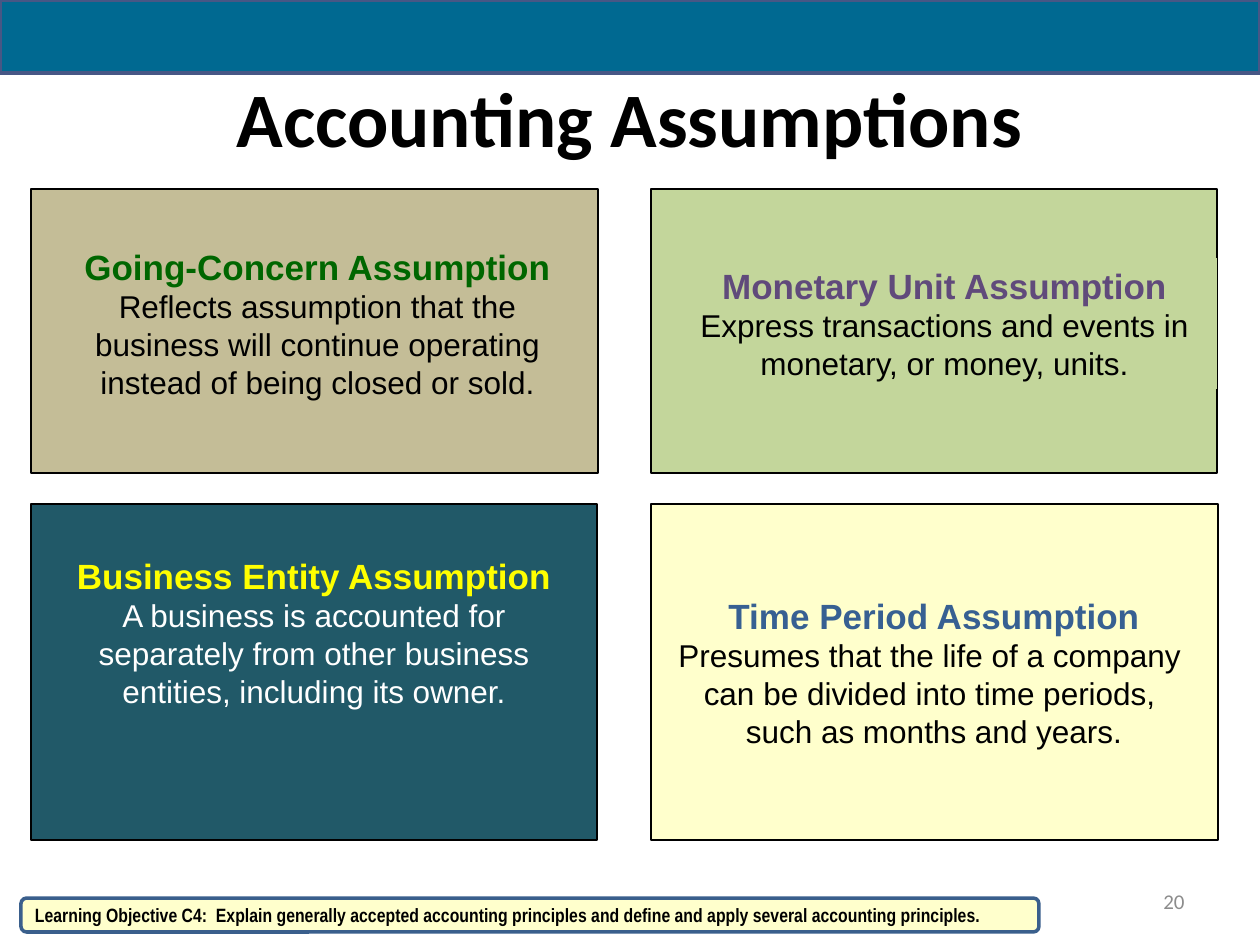
import pptx
import pptx.dml.color
import pptx.enum.shapes
import pptx.enum.text
import pptx.util

PX = 914400 / 126
SHAPE = pptx.enum.shapes.MSO_SHAPE
ALIGN = pptx.enum.text.PP_ALIGN
ANCHOR = pptx.enum.text.MSO_ANCHOR

# Card area, text area, fill, heading colour, body colour, heading, body lines
CARDS = [
    ((651, 189, 566, 284), (672, 258, 545, 131), "C3D69B", "604A7B", "000000",
     "Monetary Unit Assumption",
     ["Express transactions and events in monetary, or money, units."]),
    ((31, 504, 566, 336), (46, 548, 536, 165), "215968", "FFFF00", "FFFFFF",
     "Business Entity Assumption",
     ["A business is accounted for separately from other business entities, "
      "including its owner."]),
    ((651, 504, 567, 336), (640, 588, 588, 170), "FFFFCC", "376092", "000000",
     "Time Period Assumption",
     ["Presumes that the life of a company ",
      "can be divided into time periods, ",
      "such as months and years."]),
    ((31, 189, 567, 284), (41, 239, 553, 170), "C4BD97", "006600", "000000",
     "Going-Concern Assumption",
     ["Reflects assumption that the business will continue operating instead "
      "of being closed or sold."]),
]


def emu(area):
    return [round(length * PX) for length in area]


def color(hex_value):
    return pptx.dml.color.RGBColor.from_string(hex_value)


def add_box(slide, area, fill, line=None, width=0.75, kind=SHAPE.RECTANGLE):
    box = slide.shapes.add_shape(kind, *emu(area))
    box.shadow.inherit = False
    box.fill.solid()
    box.fill.fore_color.rgb = color(fill)
    if line:
        box.line.color.rgb = color(line)
        box.line.width = pptx.util.Pt(width)
    else:
        box.line.fill.background()
    return box


def add_text_area(slide, area):
    return slide.shapes.add_textbox(*emu(area))


def write(holder, text, size, ink, font="Arial", bold=False,
          align=ALIGN.CENTER, anchor=ANCHOR.TOP):
    """Write a paragraph, after any text that is already there."""
    frame = holder.text_frame
    frame.word_wrap = True
    frame.vertical_anchor = anchor
    paragraph = frame.add_paragraph() if frame.text else frame.paragraphs[0]
    paragraph.alignment = align
    run = paragraph.add_run()
    run.text = text
    run.font.name = font
    run.font.size = pptx.util.Pt(size)
    run.font.bold = bold
    run.font.color.rgb = color(ink)


def add_title(slide, text):
    title = slide.shapes.title
    title.left, title.top, title.width, title.height = emu((63, 38, 1134, 157))
    write(title, text, 44, "000000", font="Calibri", bold=True,
          anchor=ANCHOR.MIDDLE)


def add_card(slide, area, text_area, fill, heading_ink, body_ink, heading, body):
    add_box(slide, area, fill, line="000000")
    # Text wider than its card stays unfilled so the border remains visible
    if text_area[2] > area[2]:
        statement = add_text_area(slide, text_area)
    else:
        statement = add_box(slide, text_area, fill)
    write(statement, heading, 20, heading_ink, bold=True)
    for line in body:
        write(statement, line, 18, body_ink)
    statement.text_frame.auto_size = pptx.enum.text.MSO_AUTO_SIZE.SHAPE_TO_FIT_TEXT


def main():
    deck = pptx.Presentation()
    deck.slide_width, deck.slide_height = emu((1260, 945))
    slide = deck.slides.add_slide(deck.slide_layouts.get_by_name("Title Only"))

    # Title and the four assumptions
    add_title(slide, "Accounting Assumptions")
    for card in CARDS:
        add_card(slide, *card)

    # Page number
    page_number = add_text_area(slide, (903, 876, 294, 50))
    write(page_number, "20", 12, "8C8C8C", font="Calibri",
          align=ALIGN.RIGHT, anchor=ANCHOR.MIDDLE)

    # Top band
    add_box(slide, (0, 0, 1260, 73), "006991", line="475785", width=2.25)

    # Learning objective
    objective = add_box(slide, (21, 898, 1018, 34), "FFFFCC", line="3A5F8C",
                        width=2, kind=SHAPE.ROUNDED_RECTANGLE)
    write(objective,
          "Learning Objective C4:  Explain generally accepted accounting "
          "principles and define and apply several accounting principles.",
          11, "000000", font="Arial Narrow", bold=True,
          align=ALIGN.LEFT, anchor=ANCHOR.MIDDLE)

    deck.save("out.pptx")


if __name__ == "__main__":
    main()
